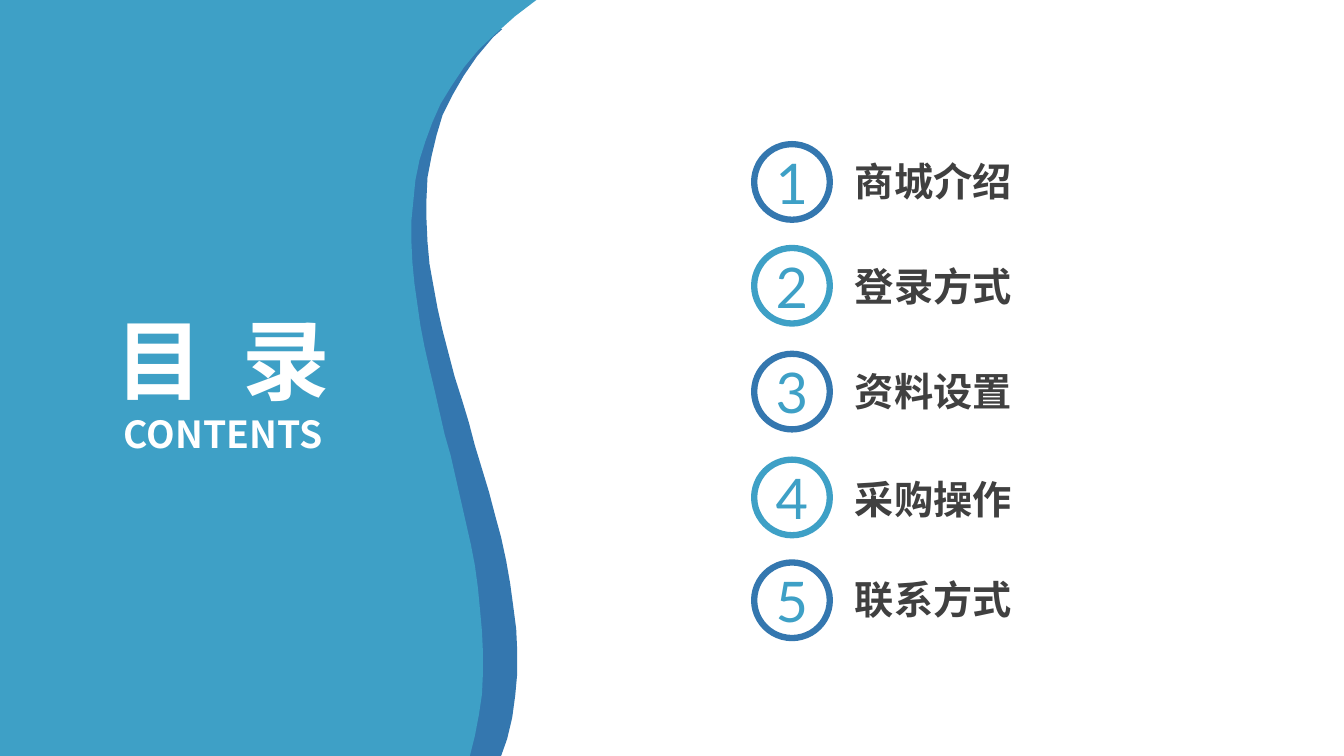
from dataclasses import dataclass

import lxml.etree
import pptx
import pptx.dml.color
import pptx.enum.shapes
import pptx.enum.text
import pptx.oxml.ns
import pptx.util

Inches = pptx.util.Inches
Pt = pptx.util.Pt
RGBColor = pptx.dml.color.RGBColor
Align = pptx.enum.text.PP_ALIGN
Anchor = pptx.enum.text.MSO_ANCHOR
AutoSize = pptx.enum.text.MSO_AUTO_SIZE

WHITE = RGBColor(0xFF, 0xFF, 0xFF)
SKY = RGBColor(0x3E, 0xA0, 0xC6)
DEEP = RGBColor(0x34, 0x77, 0xAF)
CHARCOAL = RGBColor(0x40, 0x40, 0x40)

HEADING_FONT = "Noto Sans CJK SC"
NUMBER_FONT = "Lato"

Points = list[tuple[float, float]]


@dataclass
class Chapter:
    title: str
    ring_top: float
    title_top: float


@dataclass
class Wave:
    color: RGBColor
    outline: Points


CHAPTERS = [
    Chapter("商城介绍", 1.43, 1.56),
    Chapter("登录方式", 2.46, 2.6),
    Chapter("资料设置", 3.51, 3.64),
    Chapter("采购操作", 4.56, 4.71),
    Chapter("联系方式", 5.58, 5.71),
]

# Each wave: left corner, curved right edge from top to bottom, lower corner
WAVES = [
    Wave(DEEP, [
        (0.05, 0.29),
        (4.98, 0.29), (4.89, 0.37), (4.73, 0.56), (4.6, 0.75), (4.49, 0.94),
        (4.39, 1.14), (4.33, 1.34), (4.28, 1.55), (4.24, 1.76), (4.23, 1.97),
        (4.23, 2.18), (4.24, 2.4), (4.26, 2.62), (4.3, 2.84), (4.34, 3.06),
        (4.39, 3.28), (4.45, 3.51), (4.51, 3.74), (4.58, 3.96), (4.65, 4.19),
        (4.71, 4.42), (4.78, 4.65), (4.85, 4.88), (4.91, 5.11), (4.97, 5.33),
        (5.02, 5.56), (5.06, 5.79), (5.09, 6.01), (5.12, 6.24), (5.13, 6.46),
        (5.13, 6.68), (5.11, 6.9), (5.08, 7.12), (5.03, 7.33), (4.97, 7.5),
        (4.17, 7.5),
    ]),
    Wave(SKY, [
        (0, 0),
        (5.32, 0), (5.11, 0.16), (4.92, 0.33), (4.75, 0.49), (4.6, 0.67),
        (4.48, 0.85), (4.37, 1.03), (4.29, 1.21), (4.22, 1.4), (4.16, 1.59),
        (4.12, 1.79), (4.1, 1.99), (4.08, 2.19), (4.08, 2.39), (4.09, 2.6),
        (4.11, 2.81), (4.14, 3.02), (4.17, 3.23), (4.21, 3.44), (4.26, 3.66),
        (4.31, 3.87), (4.36, 4.09), (4.41, 4.31), (4.47, 4.52), (4.52, 4.74),
        (4.57, 4.96), (4.62, 5.18), (4.67, 5.4), (4.71, 5.61), (4.74, 5.83),
        (4.76, 6.04), (4.78, 6.26), (4.79, 6.47), (4.79, 6.68), (4.78, 6.89),
        (4.75, 7.09), (4.71, 7.3), (4.66, 7.5),
        (0, 7.5),
    ]),
]


def write_text(shape, text: str, *, size: float, color: RGBColor,
               font: str = HEADING_FONT, bold: bool = True,
               align=Align.CENTER, anchor=Anchor.MIDDLE,
               tracking: float = 0) -> None:
    """Fill a shape with one line; tracking widens the gaps between letters."""
    frame = shape.text_frame
    frame.word_wrap = True
    frame.vertical_anchor = anchor
    frame.margin_left = frame.margin_right = 0
    frame.margin_top = frame.margin_bottom = 0
    paragraph = frame.paragraphs[0]
    paragraph.alignment = align
    for piece, gap in [(text[:-1], tracking), (text[-1], 0)] if tracking else [(text, 0)]:
        run = paragraph.add_run()
        run.text = piece
        run.font.name = font
        run.font.size = Pt(size)
        run.font.bold = bold
        run.font.color.rgb = color
        properties = run.font._element
        if gap:
            properties.set("spc", str(int(gap * 100)))
        east_asian = lxml.etree.SubElement(properties, pptx.oxml.ns.qn("a:ea"))
        east_asian.set("typeface", font)


def add_label(slide, text: str, left: float, top: float, width: float,
              height: float, **text_format) -> None:
    label = slide.shapes.add_textbox(
        Inches(left), Inches(top), Inches(width), Inches(height))
    write_text(label, text, **text_format)
    label.text_frame.auto_size = AutoSize.SHAPE_TO_FIT_TEXT


def add_wave(slide, wave: Wave) -> None:
    start, *rest = [(Inches(x), Inches(y)) for x, y in wave.outline]
    builder = slide.shapes.build_freeform(*start)
    builder.add_line_segments(rest, close=True)
    panel = builder.convert_to_shape()
    panel.shadow.inherit = False
    panel.fill.solid()
    panel.fill.fore_color.rgb = wave.color
    panel.line.fill.background()


def add_chapter(slide, number: int, chapter: Chapter) -> None:
    ring = slide.shapes.add_shape(
        pptx.enum.shapes.MSO_SHAPE.OVAL,
        Inches(7.48), Inches(chapter.ring_top), Inches(0.75), Inches(0.75))
    ring.shadow.inherit = False
    ring.fill.solid()
    ring.fill.fore_color.rgb = WHITE
    ring.line.color.rgb = DEEP if number % 2 else SKY
    ring.line.width = Pt(4.5)
    write_text(ring, str(number), size=40, color=SKY, font=NUMBER_FONT, bold=False)
    add_label(slide, chapter.title, 8.48, chapter.title_top, 2.7, 0.47,
              size=28, color=CHARCOAL, align=Align.JUSTIFY)


def main() -> None:
    deck = pptx.Presentation()
    deck.slide_width = Inches(13.33)
    deck.slide_height = Inches(7.5)
    slide = deck.slides.add_slide(deck.slide_layouts[6])

    # Wavy panel on the left
    for wave in WAVES:
        add_wave(slide, wave)

    # Heading
    add_label(slide, "目 录", 0.72, 3.03, 2.98, 1.05,
              size=62.5, color=WHITE, tracking=7)
    add_label(slide, "CONTENTS", 0.74, 4.08, 2.95, 0.45,
              size=26.6, color=WHITE, anchor=Anchor.TOP)

    # Numbered chapters
    for number, chapter in enumerate(CHAPTERS, start=1):
        add_chapter(slide, number, chapter)

    deck.save("out.pptx")


if __name__ == "__main__":
    main()
